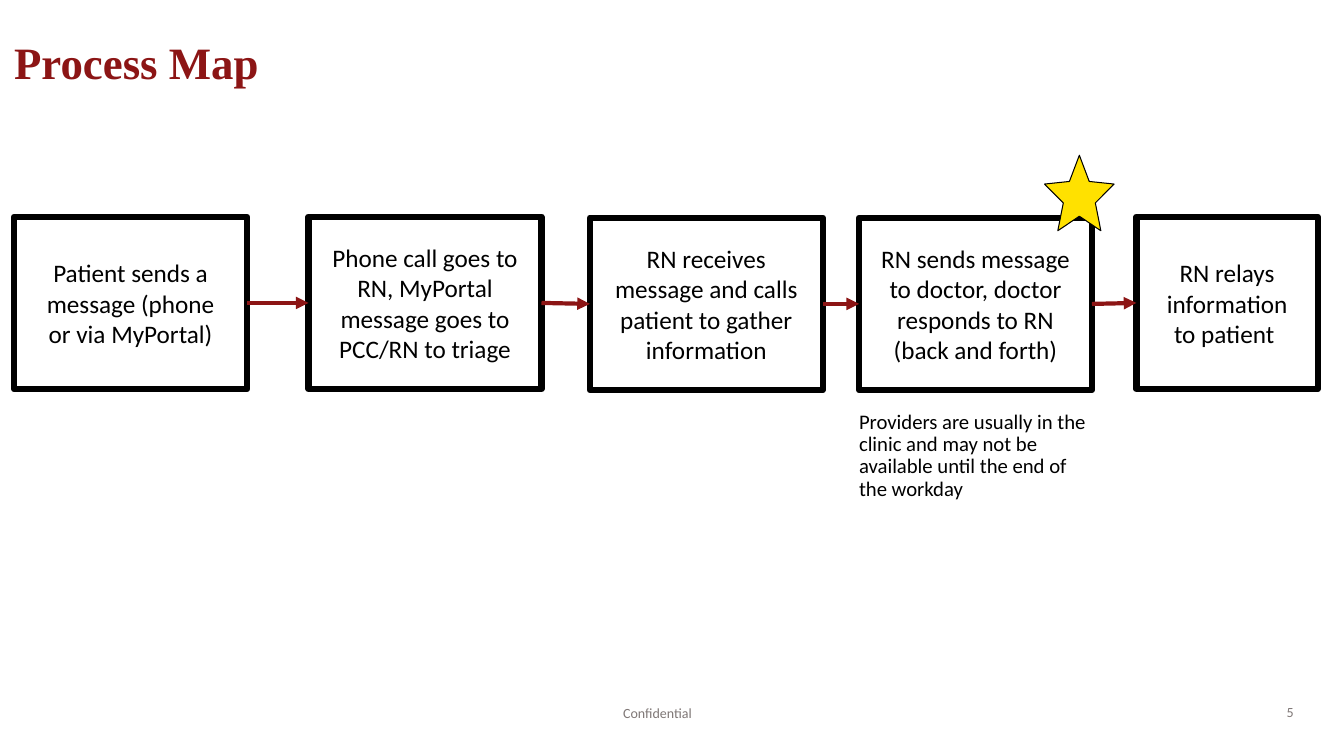
from dataclasses import dataclass

from lxml import etree
from pptx import Presentation
from pptx.dml.color import RGBColor
from pptx.enum.shapes import MSO_CONNECTOR, MSO_SHAPE
from pptx.enum.text import MSO_ANCHOR, MSO_AUTO_SIZE, PP_ALIGN
from pptx.oxml.ns import qn
from pptx.util import Inches, Pt

RECTANGLE, STAR = MSO_SHAPE.RECTANGLE, MSO_SHAPE.STAR_5_POINT
STRAIGHT = MSO_CONNECTOR.STRAIGHT
TOP, MIDDLE, BOTTOM = MSO_ANCHOR.TOP, MSO_ANCHOR.MIDDLE, MSO_ANCHOR.BOTTOM
LEFT, CENTER, RIGHT = PP_ALIGN.LEFT, PP_ALIGN.CENTER, PP_ALIGN.RIGHT
LEFT_SIDE, RIGHT_SIDE = 1, 3

COLORS = {"cardinal": "8C1515", "ink": "000000", "gray": "7F7776", "gold": "FFE100"}
BODY_FONT, TITLE_FONT = "Calibri", "Times New Roman"

# Grid: 100 columns by 100 rows over the slide
WIDTH, HEIGHT = Inches(13.33), Inches(7.5)
STEP_COLS, STEP_ROWS = 17.33, 22.8
FOOTER_ROW = 92.53


@dataclass
class Area:
    col: float
    row: float
    cols: float
    rows: float

    def box(self) -> tuple[int, int, int, int]:
        return (round(WIDTH * self.col / 100), round(HEIGHT * self.row / 100),
                round(WIDTH * self.cols / 100), round(HEIGHT * self.rows / 100))


@dataclass
class Style:
    size: float
    color: str
    font: str = BODY_FONT
    bold: bool = False
    align: PP_ALIGN = LEFT
    anchor: MSO_ANCHOR = TOP
    inset_left: float = 0
    inset_right: float = 0
    line_spacing: float = 1.0
    space_after: float = 0


@dataclass
class Step:
    text: str
    col: float
    row: float
    cols: float = STEP_COLS


@dataclass
class Label:
    text: str
    area: Area
    style: Style


TITLE_STYLE = Style(32, "cardinal", TITLE_FONT, bold=True, inset_right=1.5)
STEP_STYLE = Style(18, "ink", align=CENTER, anchor=MIDDLE,
                   inset_left=0.2, inset_right=0.2, space_after=6)

TITLE = Label("Process Map", Area(1.05, 4.53, 92.42, 14.8), TITLE_STYLE)
STEPS = [
    Step("Patient sends a message (phone or via MyPortal)", 1.05, 28.67),
    Step("Phone call goes to RN, MyPortal message goes to PCC/RN to triage", 22.96, 28.67),
    Step("RN receives message and calls patient to gather information", 43.89, 28.8),
    Step("RN sends message to doctor, doctor responds to RN (back and forth)", 63.92, 28.8),
    Step("RN relays information to patient ", 84.55, 28.67, 13.5),
]
LABELS = [
    Label("Providers are usually in the clinic and may not be available until "
          "the end of the workday", Area(63.92, 54.4, STEP_COLS, 12.53),
          Style(14.8, "ink", line_spacing=0.9)),
    Label("Confidential", Area(33.16, FOOTER_ROW, 31.51, 2.93),
          Style(10, "gray", align=CENTER, anchor=BOTTOM)),
    Label("5", Area(93.1, FOOTER_ROW, 3.15, 2.8),
          Style(10, "gray", align=RIGHT, anchor=BOTTOM)),
]
STAR_AREA = Area(77.72, 20.53, 5.18, 10)


def rgb(name: str) -> RGBColor:
    return RGBColor.from_string(COLORS[name])


def write(shape, text: str, style: Style) -> None:
    frame = shape.text_frame
    frame.word_wrap = True
    frame.auto_size = MSO_AUTO_SIZE.NONE
    frame.vertical_anchor = style.anchor
    frame.margin_left, frame.margin_right = Inches(style.inset_left), Inches(style.inset_right)
    frame.margin_top = frame.margin_bottom = 0
    paragraph = frame.paragraphs[0]
    paragraph.alignment = style.align
    paragraph.line_spacing = style.line_spacing
    paragraph.space_after = Pt(style.space_after)
    run = paragraph.add_run()
    run.text = text
    run.font.name, run.font.size, run.font.bold = style.font, Pt(style.size), style.bold
    run.font.color.rgb = rgb(style.color)


def add_title(slide, label: Label) -> None:
    title = slide.shapes.title
    title.left, title.top, title.width, title.height = label.area.box()
    write(title, label.text, label.style)


def add_step(slide, step: Step):
    rectangle = slide.shapes.add_shape(
        RECTANGLE, *Area(step.col, step.row, step.cols, STEP_ROWS).box())
    rectangle.shadow.inherit = False
    rectangle.fill.background()
    rectangle.line.color.rgb = rgb("ink")
    rectangle.line.width = Pt(4.5)
    etree.SubElement(rectangle.line._get_or_add_ln(), qn("a:round"))
    write(rectangle, step.text, STEP_STYLE)
    return rectangle


def add_arrow(slide, source, target) -> None:
    arrow = slide.shapes.add_connector(STRAIGHT, 0, 0, 0, 0)
    arrow.begin_connect(source, RIGHT_SIDE)
    arrow.end_connect(target, LEFT_SIDE)
    arrow.line.color.rgb = rgb("cardinal")
    arrow.line.width = Pt(3)
    etree.SubElement(arrow.line._get_or_add_ln(), qn("a:tailEnd"), type="triangle")
    etree.SubElement(arrow._element.spPr, qn("a:effectLst"))


def add_star(slide, area: Area) -> None:
    star = slide.shapes.add_shape(STAR, *area.box())
    star.shadow.inherit = False
    star.adjustments[0] = 0.23
    star.fill.solid()
    star.fill.fore_color.rgb = rgb("gold")
    star.line.color.rgb = rgb("ink")
    star.line.width = Pt(0.75)


def main() -> None:
    deck = Presentation()
    deck.slide_width, deck.slide_height = WIDTH, HEIGHT
    slide = deck.slides.add_slide(deck.slide_layouts.get_by_name("Title Only"))

    add_title(slide, TITLE)

    # Process steps and the flow between them
    boxes = [add_step(slide, step) for step in STEPS]
    for source, target in zip(boxes, boxes[1:]):
        add_arrow(slide, source, target)

    # Bottleneck star, its note, and the footer
    add_star(slide, STAR_AREA)
    for label in LABELS:
        write(slide.shapes.add_textbox(*label.area.box()), label.text, label.style)

    deck.save("out.pptx")


if __name__ == "__main__":
    main()
